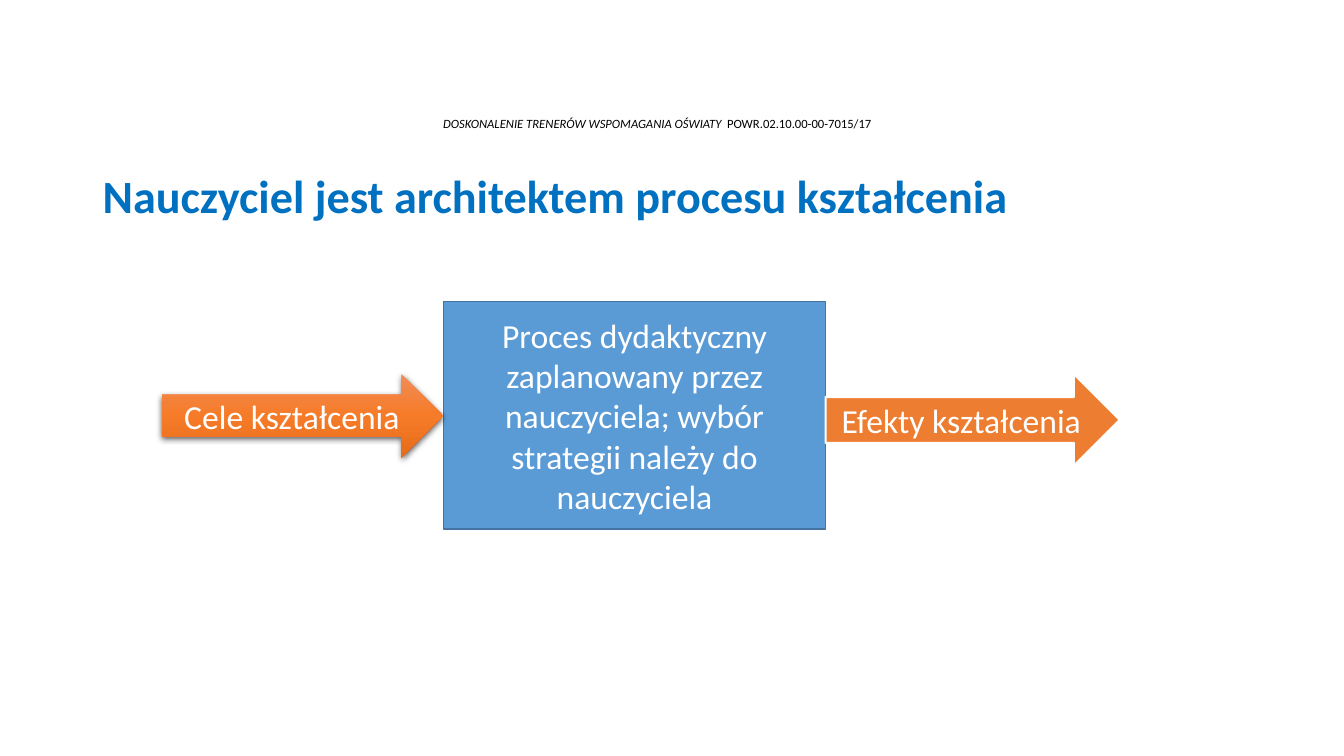
import pptx
import pptx.util
import pptx.oxml
import pptx.oxml.ns
import pptx.dml.color
import pptx.enum.shapes
import pptx.enum.text

Pt = pptx.util.Pt
SHAPE = pptx.enum.shapes.MSO_SHAPE
ALIGN = pptx.enum.text.PP_ALIGN
ANCHOR = pptx.enum.text.MSO_ANCHOR

COLORS = {
    "ink": "000000",
    "title": "0070C0",
    "process": "5B9BD5",
    "process_edge": "43739E",
    "effects": "ED7D31",
    "white": "FFFFFF",
    "goals_top": "F18C57",
    "goals_middle": "F67B28",
    "goals_bottom": "E56C19",
}


def rgb(name):
    return pptx.dml.color.RGBColor.from_string(COLORS[name])


def style_run(run, size, color, bold=False, italic=False):
    run.font.name = "Calibri"
    run.font.size = Pt(size)
    run.font.bold = bold
    run.font.italic = italic
    run.font.color.rgb = rgb(color)


deck = pptx.Presentation()
deck.slide_width, deck.slide_height = Pt(960), Pt(540)
slide = deck.slides.add_slide(deck.slide_layouts[6])

# Project line
project = slide.shapes.add_textbox(Pt(57), Pt(33), Pt(825), Pt(88)).text_frame
project.word_wrap = True
project.margin_top = Pt(51)
project_line = project.paragraphs[0]
project_line.alignment = ALIGN.CENTER
project_line.line_spacing = 0.9
for words, italic in (
    ("DOSKONALENIE TRENERÓW WSPOMAGANIA OŚWIATY  ", True),
    ("POWR.02.10.00-00-7015/17", False),
):
    run = project_line.add_run()
    run.text = words
    style_run(run, 9, "ink", italic=italic)

# Title
title = slide.shapes.add_textbox(Pt(66.24), Pt(105), Pt(828), Pt(73)).text_frame
title.word_wrap = True
title.vertical_anchor = ANCHOR.MIDDLE
title.text = "Nauczyciel jest architektem procesu kształcenia"
title.paragraphs[0].line_spacing = 0.9
style_run(title.paragraphs[0].runs[0], 33, "title", bold=True)

# Goals -> process -> effects: kind, box, fill, line colour and width, wording
steps = [
    (SHAPE.RECTANGLE, (316.8, 215.3, 272.9, 162.7), "process", ("process_edge", 1),
     "Proces dydaktyczny zaplanowany przez nauczyciela; "
     "wybór strategii należy do nauczyciela"),
    (SHAPE.RIGHT_ARROW, (115.4, 267.2, 201.2, 59.8), None, None, "Cele kształcenia"),
    (SHAPE.RIGHT_ARROW, (589.7, 267.2, 210.2, 65.5), "effects", ("white", 1.5),
     "Efekty kształcenia"),
]
flow = []
for kind, box, fill, line, wording in steps:
    step = slide.shapes.add_shape(kind, *map(Pt, box))
    step.shadow.inherit = False
    if fill:
        step.fill.solid()
        step.fill.fore_color.rgb = rgb(fill)
    if line:
        step.line.color.rgb = rgb(line[0])
        step.line.width = Pt(line[1])
    else:
        step.line.fill.background()
    step.text_frame.word_wrap = True
    step.text_frame.vertical_anchor = ANCHOR.MIDDLE
    step.text_frame.text = wording
    paragraph = step.text_frame.paragraphs[0]
    paragraph.alignment = ALIGN.CENTER
    style_run(paragraph.runs[0], 24, "white")
    flow.append(step)

# Goals arrow: three-stop gradient from top to bottom, soft shadow below
goals = flow[1]
goals.fill.gradient()
goals.fill.gradient_angle = 270
namespace = pptx.oxml.ns.nsdecls("a")
properties = goals.element.spPr
stops = properties.find(".//" + pptx.oxml.ns.qn("a:gsLst"))
for stop in list(stops):
    stops.remove(stop)
for position, name in ((0, "goals_top"), (50, "goals_middle"), (100, "goals_bottom")):
    stops.append(pptx.oxml.parse_xml(
        f'<a:gs {namespace} pos="{position * 1000}">'
        f'<a:srgbClr val="{COLORS[name]}"/></a:gs>'))
properties.find(pptx.oxml.ns.qn("a:effectLst")).append(pptx.oxml.parse_xml(
    f'<a:outerShdw {namespace} blurRad="{Pt(4.5)}" dist="{Pt(1.5)}" dir="5400000" '
    f'algn="ctr" rotWithShape="0"><a:srgbClr val="{COLORS["ink"]}">'
    '<a:alpha val="63000"/></a:srgbClr></a:outerShdw>'))

deck.save("out.pptx")
